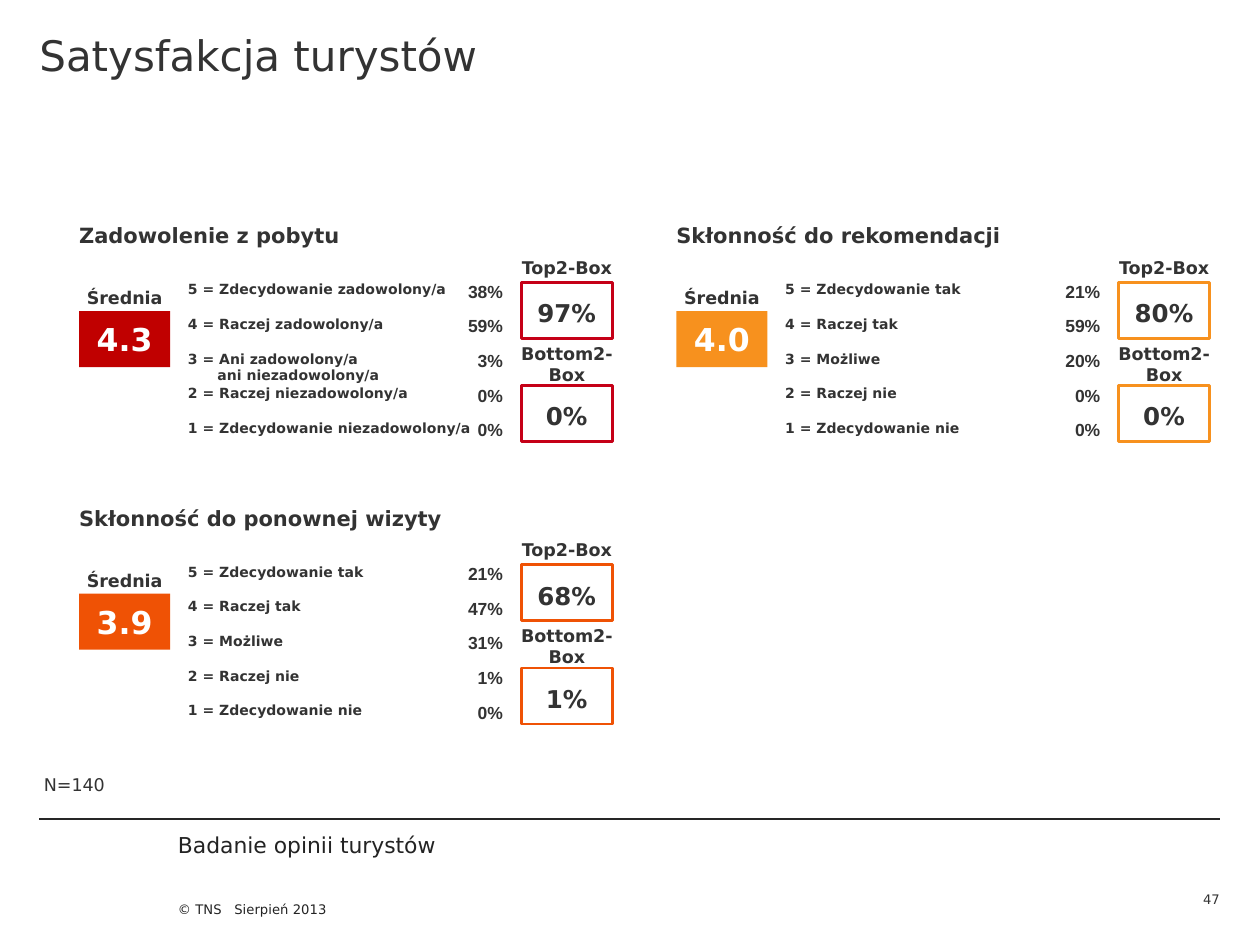
import dataclasses
import pptx
import pptx.dml.color
import pptx.enum.shapes
import pptx.enum.text
import pptx.oxml
import pptx.oxml.ns
import pptx.util

Pt = pptx.util.Pt
RGB = pptx.dml.color.RGBColor.from_string
ALIGN = pptx.enum.text.PP_ALIGN
ANCHOR = pptx.enum.text.MSO_ANCHOR


@dataclasses.dataclass(frozen=True)
class Theme:
    """Hold the fonts, colours and type sizes."""
    face: str = "DejaVu Sans"
    digit: str = "Arial"
    ink: str = "333333"
    foot: str = "232323"
    rule: str = "262626"
    white: str = "FFFFFF"
    dark: str = "C00000"
    red: str = "C50017"
    amber: str = "F7911E"
    orange: str = "EF5205"
    title: float = 24
    mean: float = 18
    score: float = 14
    name: float = 12.5
    head: float = 12
    label: float = 10
    scale: float = 8
    small: float = 7.5


THEME = Theme()
ANSWERS = ["Zdecydowanie tak", "Raczej tak", "Możliwe", "Raczej nie", "Zdecydowanie nie"]
MOODS = ["Zdecydowanie zadowolony/a", "Raczej zadowolony/a",
         "Ani zadowolony/a\nani niezadowolony/a",
         "Raczej niezadowolony/a", "Zdecydowanie niezadowolony/a"]
COLS = [45.2, 386.5]
ROWS = [127.4, 288.8]
PANELS = [
    (0, 0, "Zadowolenie z pobytu", "4.3", MOODS, [38, 59, 3, 0, 0],
     [97, 0], THEME.dark, THEME.red),
    (1, 0, "Skłonność do rekomendacji", "4.0", ANSWERS, [21, 59, 20, 0, 0],
     [80, 0], THEME.amber, THEME.amber),
    (0, 1, "Skłonność do ponownej wizyty", "3.9", ANSWERS, [21, 47, 31, 1, 0],
     [68, 1], THEME.orange, THEME.orange),
]


def write(shape, text, size, color=THEME.ink, bold=False, align=ALIGN.LEFT,
          anchor=ANCHOR.TOP, face=THEME.face, pad=(0, 0, 0, 0)):
    """Fill a shape with text in one style and return its frame."""
    frame = shape.text_frame
    frame.text = text
    frame.word_wrap = True
    frame.vertical_anchor = anchor
    (frame.margin_left, frame.margin_top,
     frame.margin_right, frame.margin_bottom) = map(Pt, pad)
    for para in frame.paragraphs:
        para.alignment = align
        para.font.name = face
        para.font.size = Pt(size)
        para.font.bold = bold
        para.font.color.rgb = RGB(color)
    return frame


def label(slide, box, text, size, **style):
    """Add a text box."""
    return write(slide.shapes.add_textbox(*map(Pt, box)), text, size, **style)


def tile(slide, box, text, size, fill, line=None, **style):
    """Add a filled rectangle with a centred bold figure."""
    kind = pptx.enum.shapes.MSO_SHAPE.RECTANGLE
    shape = slide.shapes.add_shape(kind, *map(Pt, box))
    shape.shadow.inherit = False
    shape.fill.solid()
    shape.fill.fore_color.rgb = RGB(fill)
    if line:
        shape.line.color.rgb = RGB(line)
        shape.line.width = Pt(1.5)
    else:
        shape.line.fill.background()
    write(shape, text, size, bold=True, align=ALIGN.CENTER, anchor=ANCHOR.MIDDLE, **style)


def scale(slide, box, names, shares):
    """Add the answer rows with their shares."""
    left, top, width, height = box
    step = height / len(names)
    for row, (name, share) in enumerate(zip(names, shares)):
        y = top + row * step
        frame = label(slide, (left, y, 176, 10), f"{len(names) - row} = {name}",
                      THEME.scale, bold=True)
        for para in frame.paragraphs[1:]:
            para._p.get_or_add_pPr().set("marL", str(Pt(16.8)))
        label(slide, (left + width - 30, y, 30, 12), f"{share}%", THEME.label,
              bold=True, align=ALIGN.RIGHT, face=THEME.digit)


def panel(slide, box, head, mean, names, shares, tops, fill, line):
    """Add one question with its mean, scale and box scores."""
    left, top, width, height = box
    wide, high = 52, 32
    mid = {"bold": True, "align": ALIGN.CENTER}
    label(slide, (left, top, width, 14.4), head, THEME.head, bold=True)
    scale(slide, (left + 62.2, top + 33.1, 180, height - 26), names, shares)
    tile(slide, (left, top + 50.4, wide, high), mean, THEME.mean, fill, color=THEME.white)
    label(slide, (left - 4, top + 36.7, wide + 8, 12), "Średnia", THEME.label, **mid)
    side = left + width - wide
    parts = zip(["Top2-Box", "Bottom2-Box"], tops, [19.4, 68.4], [33.9, 92.9])
    for name, score, above, down in parts:
        tile(slide, (side, top + down, wide, high), f"{score}%", THEME.score,
             THEME.white, line, pad=(0, 3, 0, 0))
        label(slide, (side - 4, top + above, wide + 8, down - above), name,
              THEME.label, **mid)


def footer(slide, box):
    """Add the rule, survey name, date line and page number."""
    left, top, width, height = box
    kind = pptx.enum.shapes.MSO_CONNECTOR.STRAIGHT
    rule = slide.shapes.add_connector(kind, *map(Pt, (left, top, left + width, top)))
    rule.line.color.rgb = RGB(THEME.rule)
    rule.line.width = Pt(0.75)
    props = rule._element.spPr
    props.append(pptx.oxml.parse_xml(
        f"<a:effectLst {pptx.oxml.ns.nsdecls('a')}/>"))
    label(slide, (left + 79.2, top + 7.2, 238, 15), "Badanie opinii turystów",
          THEME.name, color=THEME.foot)
    label(slide, (left + 79.2, top + 30, 200, height - 30), "© TNS   Sierpień 2013",
          THEME.small, color=THEME.foot, anchor=ANCHOR.BOTTOM, pad=(0, 0, 0, 22.3))
    label(slide, (left + width - 40, top + 30, 40, 20.4), "47", THEME.small,
          align=ALIGN.RIGHT, anchor=ANCHOR.BOTTOM)


def title(slide, box, text):
    """Place and format the slide title."""
    shape = slide.shapes.title
    shape.left, shape.top, shape.width, shape.height = map(Pt, box)
    write(shape, text, THEME.title, pad=(0, 16.6, 0, 0))


def main():
    """Build the slide and save it."""
    deck = pptx.Presentation()
    deck.slide_width, deck.slide_height = Pt(720), Pt(540)
    slide = deck.slides.add_slide(deck.slide_layouts[5])
    title(slide, (22.5, 0, 674.5, 81), "Satysfakcja turystów")
    for col, row, *parts in PANELS:
        panel(slide, (COLS[col], ROWS[row], 304.7, 124.8), *parts)
    label(slide, (18, 438.5, 595, 29), "N=140", THEME.label, pad=(7.2, 3.6, 7.2, 3.6))
    footer(slide, (22.5, 468, 674.5, 72))
    deck.save("out.pptx")


if __name__ == "__main__":
    main()
